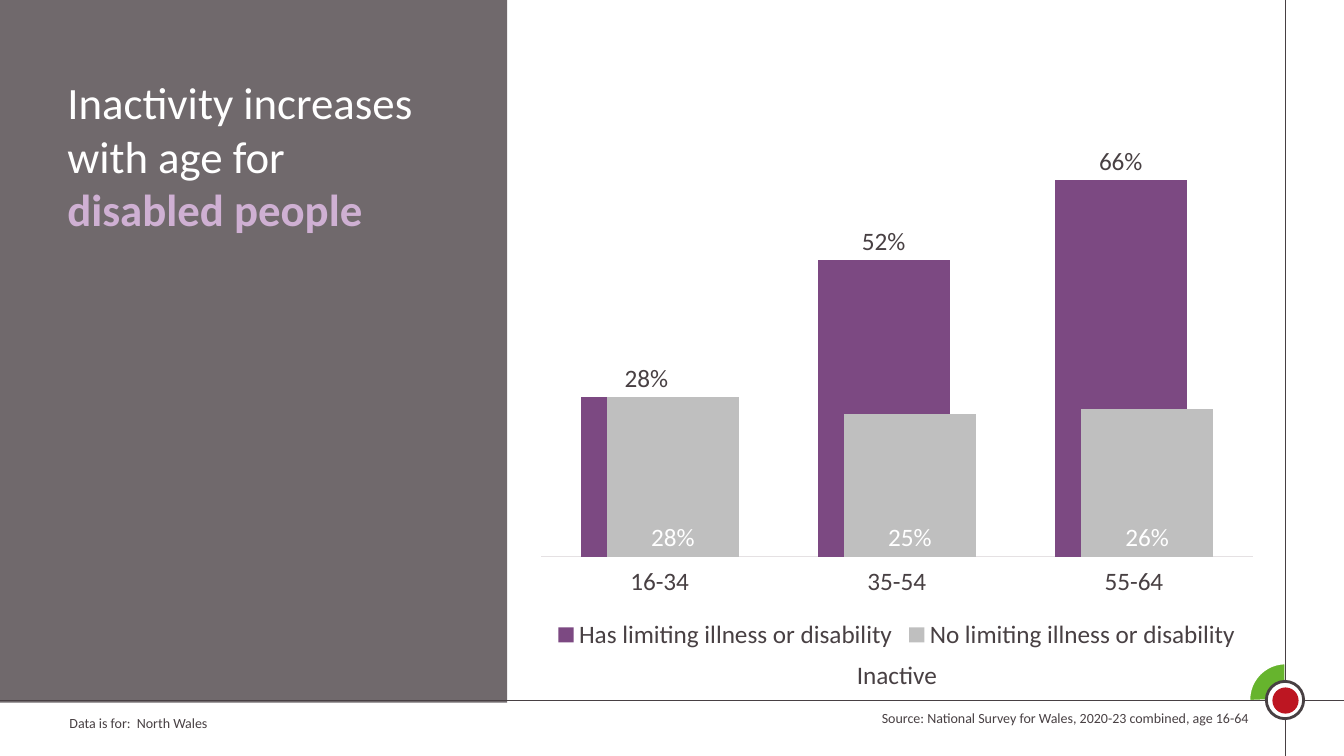
from lxml import etree
from pptx import Presentation
from pptx.chart.data import CategoryChartData as ChartData
from pptx.dml.color import RGBColor
from pptx.enum.chart import XL_CHART_TYPE as Chart, XL_LABEL_POSITION as Spot
from pptx.enum.chart import XL_LEGEND_POSITION as Legend, XL_TICK_LABEL_POSITION as Label
from pptx.enum.chart import XL_TICK_MARK as Tick
from pptx.enum.shapes import MSO_CONNECTOR as Link, MSO_SHAPE as Shape
from pptx.enum.text import PP_ALIGN as Align
from pptx.oxml.ns import qn
from pptx.util import Inches, Pt

DARK, WHITE, PURPLE, GREY = "484043", "FFFFFF", "7C4982", "BFBFBF"
FONT = "Calibri"


def color(code):
    return RGBColor.from_string(code)


def style(font, size, code, bold=False):
    font.name = FONT
    font.size = Pt(size)
    font.bold = bold
    font.color.rgb = color(code)


def add_shape(slide, kind, box, fill, line=None, width=0, alpha=None):
    shape = slide.shapes.add_shape(kind, *map(Inches, box))
    shape.shadow.inherit = False
    shape.fill.solid()
    shape.fill.fore_color.rgb = color(fill)
    if line:
        shape.line.color.rgb = color(line)
        shape.line.width = Pt(width)
    else:
        shape.line.fill.background()
    if alpha:
        tone = shape.fill._xPr.find(".//" + qn("a:srgbClr"))
        etree.SubElement(tone, qn("a:alpha"), val=str(alpha * 1000))
    return shape


def add_line(slide, *ends):
    line = slide.shapes.add_connector(Link.STRAIGHT, *map(Inches, ends))
    line.line.color.rgb = color(DARK)
    line.line.width = Pt(1)
    etree.SubElement(line._element.spPr, qn("a:effectLst"))


def add_text(slide, box, size, runs, align=Align.LEFT):
    frame = slide.shapes.add_textbox(*map(Inches, box)).text_frame
    frame.word_wrap = True
    para = frame.paragraphs[0]
    para.alignment = align
    for text, code, bold in runs:
        run = para.add_run()
        run.text = text
        style(run.font, size, code, bold)


def add_chart(slide, box, ages, groups):
    data = ChartData(number_format="0%")
    data.categories = ages
    for name, values, *_ in groups:
        data.add_series(name, values)
    chart = slide.shapes.add_chart(
        Chart.COLUMN_CLUSTERED, *map(Inches, box), data).chart
    style(chart.font, 18, DARK)
    chart.has_title = False
    chart.has_legend = True
    chart.legend.position = Legend.BOTTOM
    chart.legend.include_in_layout = False
    style(chart.legend.font, 18, DARK)

    scale = chart.value_axis
    scale.minimum_scale, scale.maximum_scale = 0, 0.7
    scale.has_major_gridlines = False
    scale.visible = False
    axis = chart.category_axis
    axis.major_tick_mark = axis.minor_tick_mark = Tick.NONE
    axis.tick_label_position = Label.LOW
    axis.format.line.color.rgb = color("E5E1E3")
    axis.format.line.width = Pt(0.75)
    style(axis.tick_labels.font, 18, DARK)

    plot = chart.plots[0]
    plot.vary_by_categories = False
    plot.gap_width, plot.overlap = 60, 80
    for series, (_, _, fill, ink, spot) in zip(plot.series, groups):
        series.format.fill.solid()
        series.format.fill.fore_color.rgb = color(fill)
        labels = series.data_labels
        labels.show_value = True
        labels.number_format = "0%"
        labels.number_format_is_linked = False
        labels.position = spot
        style(labels.font, 18, ink)


def main():
    deck = Presentation()
    deck.slide_width, deck.slide_height = Inches(13.33), Inches(7.5)
    slide = deck.slides.add_slide(deck.slide_layouts[6])

    pie = add_shape(slide, Shape.PIE, (12.39, 6.58, 0.72, 0.72),
                    "66B42D", WHITE, 1.5)
    pie.adjustments[0], pie.adjustments[1] = 106.62, 162
    add_line(slide, 12.75, 0, 12.75, 7.5)
    add_line(slide, 0, 6.95, 13.33, 6.95)
    add_shape(slide, Shape.OVAL, (12.56, 6.76, 0.37, 0.37), WHITE, DARK, 2)
    add_shape(slide, Shape.OVAL, (12.62, 6.82, 0.26, 0.26), "BD1622")
    add_text(slide, (0.59, 7.04, 4.39, 0.27), 10,
             [("Data is for:  North Wales", DARK, False)])
    add_shape(slide, Shape.RECTANGLE, (-0.01, 0, 5.04, 6.97), DARK, alpha=78)
    add_text(slide, (8.32, 6.99, 4.16, 0.27), 10,
             [("Source: National Survey for Wales, 2020-23 combined, age 16-64",
               DARK, False)], Align.RIGHT)
    add_text(slide, (0.57, 0.69, 3.73, 3.77), 32,
             [("Inactivity increases with age for ", WHITE, False),
              ("disabled people", "CFB0D3", True)])
    add_text(slide, (8.4, 6.49, 1.22, 0.4), 18, [("Inactive", DARK, False)])
    add_chart(slide, (5.22, 1.45, 7.35, 5.05), ("16-34", "35-54", "55-64"), [
        ("Has limiting illness or disability", (0.28, 0.52, 0.66),
         PURPLE, DARK, Spot.OUTSIDE_END),
        ("No limiting illness or disability", (0.28, 0.25, 0.26),
         GREY, WHITE, Spot.INSIDE_BASE),
    ])
    deck.save("out.pptx")


if __name__ == "__main__":
    main()
